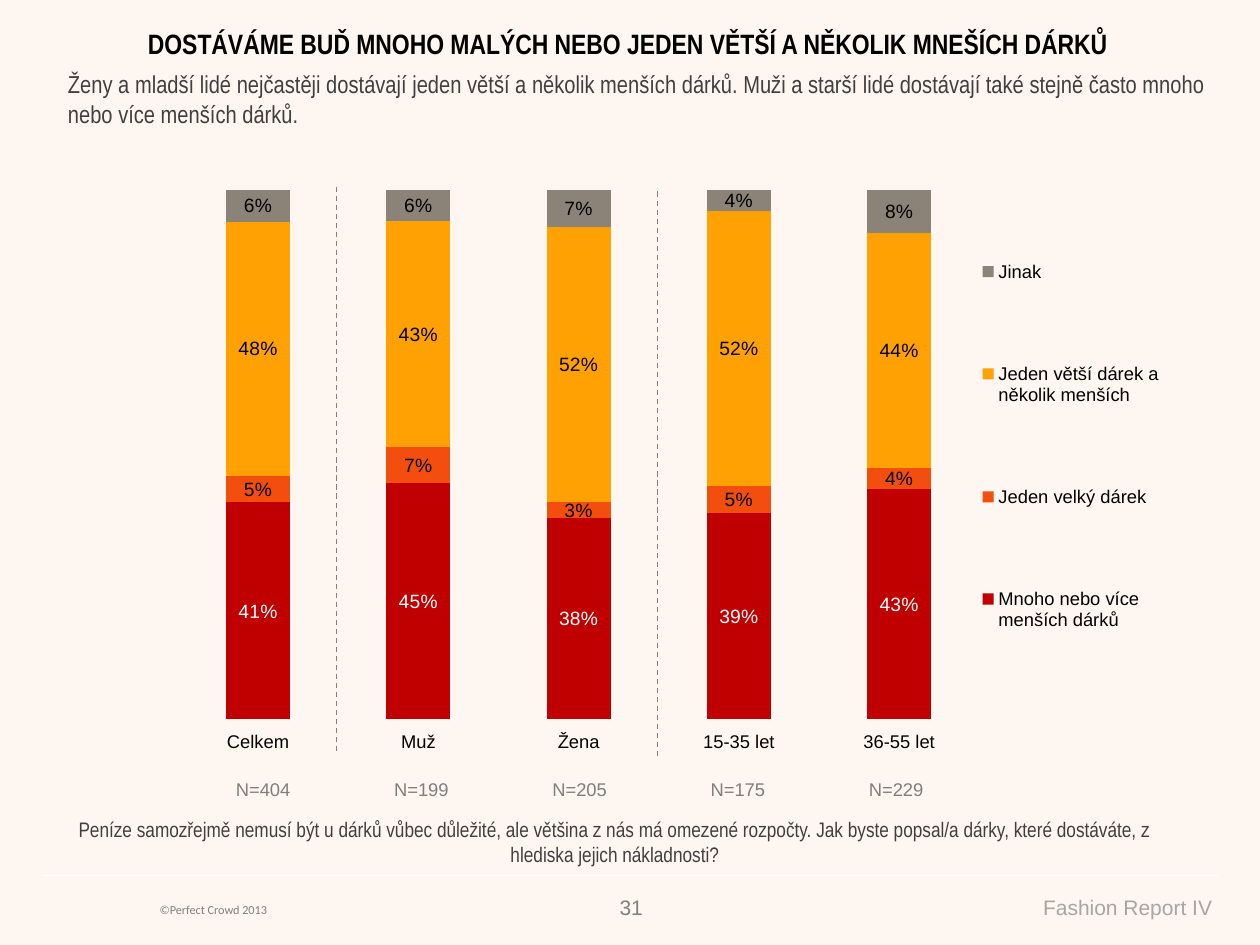
from lxml import etree
from pptx import Presentation
from pptx.chart.data import CategoryChartData
from pptx.dml.color import RGBColor
from pptx.enum.chart import XL_CHART_TYPE, XL_LABEL_POSITION, XL_LEGEND_POSITION, XL_TICK_LABEL_POSITION
from pptx.enum.dml import MSO_LINE
from pptx.enum.shapes import MSO_CONNECTOR
from pptx.enum.text import MSO_ANCHOR, PP_ALIGN
from pptx.oxml.ns import qn
from pptx.util import Cm, Pt

STACK = XL_CHART_TYPE.COLUMN_STACKED_100
MID = XL_LABEL_POSITION.CENTER
SIDE = XL_LEGEND_POSITION.RIGHT
LOW = XL_TICK_LABEL_POSITION.LOW
DASH = MSO_LINE.DASH
LINE = MSO_CONNECTOR.STRAIGHT
LEFT, CENTER, RIGHT = PP_ALIGN.LEFT, PP_ALIGN.CENTER, PP_ALIGN.RIGHT
MIDDLE = MSO_ANCHOR.MIDDLE

COLORS = {
    "back": "FEF6F0", "white": "FFFFFF", "black": "000000", "dark": "404040",
    "gray": "808080", "pale": "A6A6A6", "count": "7F7F7F", "red": "C00000",
    "orange": "F34E0D", "gold": "FFA102", "stone": "8B8278",
}
RGB = {name: RGBColor.from_string(code) for name, code in COLORS.items()}


def style(font, color, **form):
    for key, value in form.items():
        setattr(font, key, value)
    font.color.rgb = RGB[color]


def place(node, index, **spot):
    for old in node.findall(qn("c:layout")):
        node.remove(old)
    layout = etree.Element(qn("c:layout"))
    manual = etree.SubElement(layout, qn("c:manualLayout"))
    for tag, value in spot.items():
        etree.SubElement(manual, qn("c:" + tag)).set("val", str(value))
    node.insert(index, layout)


deck = Presentation()
deck.slide_width, deck.slide_height = Cm(25.4), Cm(19.05)
slide = deck.slides.add_slide(deck.slide_layouts[6])
slide.background.fill.solid()
slide.background.fill.fore_color.rgb = RGB["back"]
shapes = slide.shapes

data = CategoryChartData(number_format='#,##0"%"')
data.categories = ["Celkem", "Muž", "Žena", "15-35 let", "36-55 let"]
series = [
    ("Mnoho nebo více menších dárků", (41, 45, 38, 39, 43), "red", "white"),
    ("Jeden velký dárek", (5, 7, 3, 5, 4), "orange", "black"),
    ("Jeden větší dárek a několik menších", (48, 43, 52, 52, 44), "gold", "black"),
    ("Jinak", (6, 6, 7, 4, 8), "stone", "black"),
]
for name, values, fill, ink in series:
    data.add_series(name, values)
chart = shapes.add_chart(STACK, Cm(3.18), Cm(3.1), Cm(20.45), Cm(13.23), data).chart
style(chart.font, "black", name="Arial", size=Pt(12))
chart.has_title = False
plot = chart.plots[0]
plot.gap_width, plot.overlap, plot.vary_by_categories = 150, 100, False
for part, (name, values, fill, ink) in zip(plot.series, series):
    part.format.fill.solid()
    part.format.fill.fore_color.rgb = RGB[fill]
    labels = part.data_labels
    form = {"show_value": True, "position": MID, "number_format": '#,##0"%"',
            "number_format_is_linked": False}
    for key, value in form.items():
        setattr(labels, key, value)
    style(labels.font, ink, name="Arial", size=Pt(11))

axis = chart.category_axis
axis.tick_label_position = LOW
axis.format.line.fill.background()
style(axis.tick_labels.font, "black", name="Arial", size=Pt(10.5))
chart.value_axis.visible = False
chart.value_axis.has_major_gridlines = False
chart.has_legend = True
legend = chart.legend
legend.position = SIDE
legend.include_in_layout = False
style(legend.font, "black", name="Arial", size=Pt(10.5))
area = chart.element.find(".//" + qn("c:plotArea"))
place(area, 0, layoutTarget="inner", xMode="edge", yMode="edge",
      x=0.02, y=0.055, w=0.79, h=0.807)
place(chart.element.find(".//" + qn("c:legend")), 1, xMode="edge", yMode="edge",
      x=0.8, y=0.04, w=0.2, h=0.81)

lines = [
    (0.84, 17.65, 24.56, 17.65, "white", None),
    (6.78, 3.76, 6.78, 15.14, "gray", DASH),
    (13.26, 3.86, 13.26, 15.24, "gray", DASH),
]
for *ends, color, dash in lines:
    rule = shapes.add_connector(LINE, *map(Cm, ends))
    rule.line.color.rgb = RGB[color]
    rule.line.width = Pt(0.75)
    if dash:
        rule.line.dash_style = dash
    etree.SubElement(rule.element.spPr, qn("a:effectLst"))

texts = [
    ("©Perfect Crowd 2013", (2.97, 18.06, 7.39, 0.56), LEFT, "gray", "Calibri", 7, False),
    ("Fashion Report IV", (15.27, 17.91, 9.42, 0.76), RIGHT, "pale", "Arial", 12, False),
    ("31", (12.17, 17.91, 1.04, 0.76), RIGHT, "gray", "Arial", 12, False),
    ("Peníze samozřejmě nemusí být u dárků vůbec důležité, ale většina z nás má omezené "
     "rozpočty. Jak byste popsal/a dárky, které dostáváte, z hlediska jejich nákladnosti?",
     (0.89, 16.33, 23.01, 1.27), CENTER, "dark", "Arial Narrow", 12, False),
    ("DOSTÁVÁME BUĎ MNOHO MALÝCH NEBO JEDEN VĚTŠÍ A NĚKOLIK MNEŠÍCH DÁRKŮ",
     (1.42, 0.41, 22.48, 0.94), CENTER, "black", "Arial Narrow", 16, True),
    ("Ženy a mladší lidé nejčastěji dostávají jeden větší a několik menších dárků. Muži a "
     "starší lidé dostávají také stejně často mnoho nebo více menších dárků.",
     (1.12, 1.27, 23.72, 1.85), LEFT, "dark", "Arial Narrow", 14, False),
]
for text, box, align, color, face, size, bold in texts:
    frame = shapes.add_textbox(*map(Cm, box)).text_frame
    frame.word_wrap = True
    para = frame.paragraphs[0]
    para.text, para.alignment = text, align
    style(para.runs[0].font, color, name=face, size=Pt(size), bold=bold)

table = shapes.add_table(1, 5, Cm(3.71), Cm(15.65), Cm(15.95), Cm(0.56)).table
table.first_row = table.horz_banding = False
for cell, count in zip(table.rows[0].cells, (404, 199, 205, 175, 229)):
    cell.fill.background()
    for edge in ("left", "right", "top", "bottom"):
        setattr(cell, "margin_" + edge, 0)
    cell.vertical_anchor = MIDDLE
    para = cell.text_frame.paragraphs[0]
    para.text, para.alignment = f"N={count}", CENTER
    style(para.runs[0].font, "count", name="Arial", size=Pt(10.5), bold=False)
    for tag in ("a:lnL", "a:lnR", "a:lnT", "a:lnB"):
        edge = etree.Element(qn(tag))
        etree.SubElement(edge, qn("a:noFill"))
        cell.fill._xPr.find(qn("a:noFill")).addprevious(edge)

deck.save("out.pptx")
